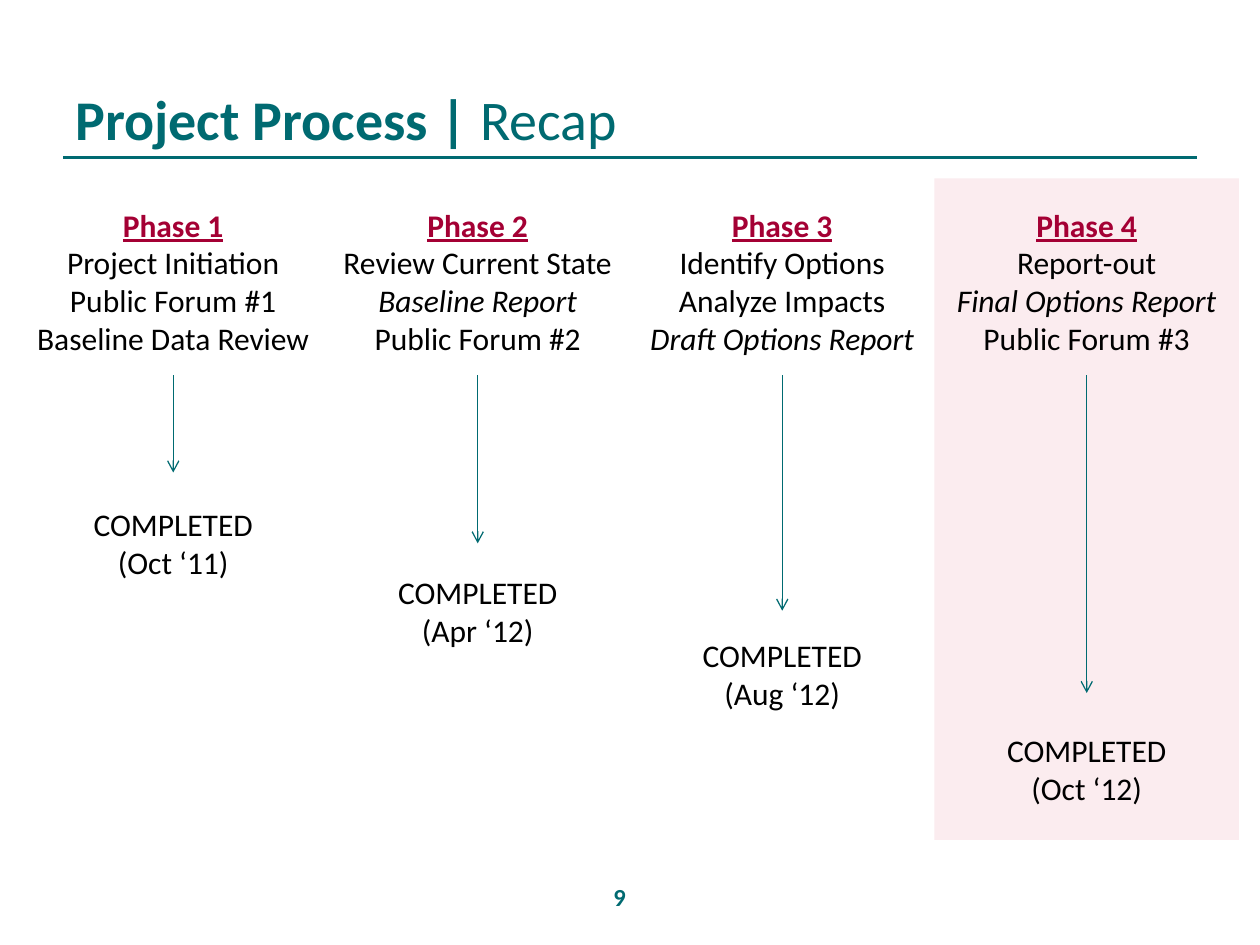
from dataclasses import dataclass

from lxml.etree import SubElement
from pptx import Presentation
from pptx.dml.color import RGBColor
from pptx.enum.shapes import MSO_CONNECTOR as Conn, MSO_SHAPE as Shape
from pptx.enum.text import MSO_ANCHOR as Anchor, MSO_AUTO_SIZE as AutoSize, PP_ALIGN as Align
from pptx.oxml.ns import qn
from pptx.util import Pt

TEAL, RED, PINK, BLACK = "006A71", "A40034", "F6C9D2", "000000"
COL_LEFT, COL_W = 12, 174
DONE_W = 126
ARROW_TOP = 214.5


@dataclass
class Phase:
    tasks: tuple[str, ...]
    report: str  # the task set in italics
    arrow_end: float
    done_top: float
    date: str


PHASES = [
    Phase(("Project Initiation", "Public Forum #1", "Baseline Data Review"),
          "", 270, 285, "(Oct ‘11)"),
    Phase(("Review Current State", "Baseline Report", "Public Forum #2"),
          "Baseline Report", 310.5, 324, "(Apr ‘12)"),
    Phase(("Identify Options", "Analyze Impacts", "Draft Options Report"),
          "Draft Options Report", 349, 360, "(Aug ‘12)"),
    Phase(("Report-out", "Final Options Report", "Public Forum #3"),
          "Final Options Report", 396, 414, "(Oct ‘12)"),
]


def rgb(color: str) -> RGBColor:
    return RGBColor.from_string(color)


def add_box(s, x: float, y: float, w: float, h: float, anchor=Anchor.TOP, grow=False):
    tf = s.shapes.add_textbox(Pt(x), Pt(y), Pt(w), Pt(h)).text_frame
    tf.word_wrap = True
    tf.vertical_anchor = anchor
    if grow:
        tf.auto_size = AutoSize.SHAPE_TO_FIT_TEXT
    return tf


def add_run(p, text: str, size: float, color: str, bold=False, italic=False, underline=False):
    r = p.add_run()
    r.text = text
    f = r.font
    f.name, f.size, f.color.rgb = "Calibri", Pt(size), rgb(color)
    f.bold, f.italic, f.underline = bold, italic, underline


def add_line(s, x1: float, y1: float, x2: float, y2: float, width: float, arrow=False):
    line = s.shapes.add_connector(Conn.STRAIGHT, Pt(x1), Pt(y1), Pt(x2), Pt(y2))
    line.line.color.rgb = rgb(TEAL)
    line.line.width = Pt(width)
    if arrow:
        SubElement(line.line._get_or_add_ln(), qn("a:tailEnd"), type="arrow")
    SubElement(line._element.spPr, qn("a:effectLst"))


def add_phase(s, number: int, phase: Phase):
    left = COL_LEFT + COL_W * (number - 1)
    center = left + COL_W / 2

    # Heading and tasks
    tf = add_box(s, left, 114, COL_W, 94.5, grow=True)
    p = tf.paragraphs[0]
    p.alignment = Align.CENTER
    add_run(p, f"Phase {number}", 18, RED, bold=True, underline=True)
    for task in phase.tasks:
        p = tf.add_paragraph()
        p.alignment = Align.CENTER
        add_run(p, task, 18, BLACK, italic=task == phase.report)

    add_line(s, center, ARROW_TOP, center, phase.arrow_end, 0.75, arrow=True)

    # Completion date
    p = add_box(s, center - DONE_W / 2, phase.done_top, DONE_W, 51, grow=True).paragraphs[0]
    p.alignment = Align.CENTER
    add_run(p, "COMPLETED", 18, BLACK)
    p.add_line_break()
    add_run(p, phase.date, 18, BLACK)


def main():
    prs = Presentation()
    prs.slide_width, prs.slide_height = Pt(720), Pt(540)
    s = prs.slides.add_slide(prs.slide_layouts[6])

    # Title rule
    add_line(s, 36, 90, 684, 90, 2)

    # Highlight behind the last phase
    band = s.shapes.add_shape(Shape.RECTANGLE, Pt(COL_LEFT + 3 * COL_W), Pt(102),
                              Pt(COL_W), Pt(378))
    band.shadow.inherit = False
    band.line.fill.background()
    band.fill.solid()
    band.fill.fore_color.rgb = rgb(PINK)
    tint = band._element.spPr.find(qn("a:solidFill"))[0]
    SubElement(tint, qn("a:alpha"), val="34000")

    # Title
    p = add_box(s, 36, 12, 648, 78, Anchor.BOTTOM).paragraphs[0]
    add_run(p, "Project Process | ", 32, TEAL, bold=True)
    add_run(p, "Recap", 32, TEAL)

    # Page number
    p = add_box(s, 276, 500.5, 156, 29).paragraphs[0]
    p.alignment = Align.CENTER
    add_run(p, "9", 14, TEAL, bold=True)

    # Phases
    for number, phase in enumerate(PHASES, 1):
        add_phase(s, number, phase)

    prs.save("out.pptx")


if __name__ == "__main__":
    main()
